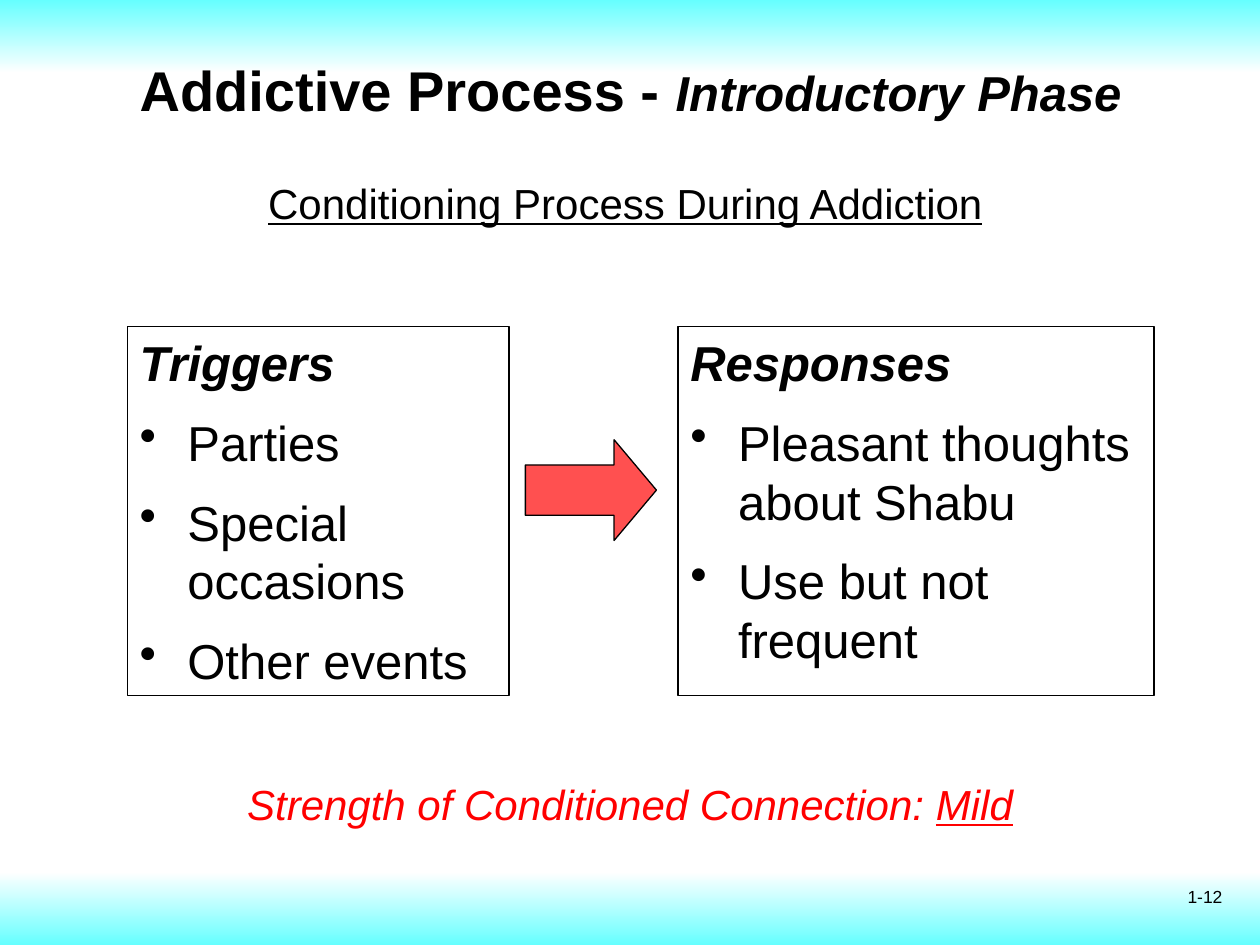
import pptx
import pptx.dml.color
import pptx.enum.shapes
import pptx.enum.text
import pptx.oxml
import pptx.oxml.ns
import pptx.util
from pptx.util import Inches

BLACK = pptx.dml.color.RGBColor(0x00, 0x00, 0x00)
WHITE = pptx.dml.color.RGBColor(0xFF, 0xFF, 0xFF)
RED = pptx.dml.color.RGBColor(0xFF, 0x00, 0x00)
CORAL = pptx.dml.color.RGBColor(0xFF, 0x50, 0x50)
CYAN = pptx.dml.color.RGBColor(0x66, 0xFF, 0xFF)

SHAPES = pptx.enum.shapes.MSO_SHAPE
ALIGN = pptx.enum.text.PP_ALIGN
ANCHOR = pptx.enum.text.MSO_ANCHOR


def add_run(para, text, size, color=BLACK, bold=False, italic=False, underline=False):
    span = para.add_run()
    span.text = text
    span.font.name = "Arial"
    span.font.size = pptx.util.Pt(size)
    span.font.color.rgb = color
    span.font.bold = bold
    span.font.italic = italic
    span.font.underline = underline


def add_text_box(left, top, width, height, align, anchor=ANCHOR.TOP, wrap=True):
    """Add an empty text box and return its text frame."""
    box = page.shapes.add_textbox(Inches(left), Inches(top), Inches(width), Inches(height))
    frame = box.text_frame
    frame.word_wrap = wrap
    frame.vertical_anchor = anchor
    frame.paragraphs[0].alignment = align
    return frame


deck = pptx.Presentation()
deck.slide_width = Inches(10)
deck.slide_height = Inches(7.5)
page = deck.slides.add_slide(deck.slide_layouts[6])

# Bands fading towards the middle of the slide
BAND_HEIGHT = 0.58
for top, upper, lower in [(7.5 - BAND_HEIGHT, WHITE, CYAN), (0, CYAN, WHITE)]:
    band = page.shapes.add_shape(
        SHAPES.RECTANGLE, 0, Inches(top), Inches(10), Inches(BAND_HEIGHT))
    band.shadow.inherit = False
    band.line.fill.background()
    band.fill.gradient()
    band.fill.gradient_angle = 270
    for stop, color in zip(band.fill.gradient_stops, (upper, lower)):
        stop.color.rgb = color
    for stop, position in zip(band.fill.gradient_stops, (0, 1)):
        stop.position = position

# Headings
title = add_text_box(0.69, 0.27, 8.63, 0.87, ALIGN.CENTER, ANCHOR.MIDDLE)
add_run(title.paragraphs[0], "Addictive Process - ", 32, bold=True)
add_run(title.paragraphs[0], "Introductory Phase", 28, bold=True, italic=True)

subtitle = add_text_box(2.03, 1.36, 5.94, 0.5, ALIGN.LEFT, wrap=False)
add_run(subtitle.paragraphs[0], "Conditioning Process During Addiction", 24, underline=True)

# Triggers and responses
PANELS = [
    (1.01, 3.03, "Triggers", ["Parties", "Special occasions", "Other events"]),
    (5.38, 3.78, "Responses", ["Pleasant thoughts about Shabu", "Use but not frequent"]),
]
for left, width, heading, items in PANELS:
    frame = add_text_box(left, 2.59, width, 2.93, ALIGN.LEFT)
    panel = page.shapes[-1]
    panel.line.color.rgb = BLACK
    panel.line.width = pptx.util.Pt(0.75)
    add_run(frame.paragraphs[0], heading, 28, bold=True, italic=True)
    for item in items:
        para = frame.add_paragraph()
        para.space_before = pptx.util.Pt(12)
        add_run(para, item, 28)
        properties = para._p.get_or_add_pPr()
        properties.set("marL", str(Inches(0.38)))
        properties.set("indent", str(Inches(-0.38)))
        bullet = pptx.oxml.parse_xml(
            f'<a:buChar {pptx.oxml.ns.nsdecls("a")} char="•"/>')
        properties.append(bullet)

arrow = page.shapes.add_shape(
    SHAPES.RIGHT_ARROW, Inches(4.17), Inches(3.49), Inches(1.04), Inches(0.8))
arrow.shadow.inherit = False
arrow.adjustments[0] = 0.5
arrow.adjustments[1] = 0.42
arrow.fill.solid()
arrow.fill.fore_color.rgb = CORAL
arrow.line.color.rgb = BLACK
arrow.line.width = pptx.util.Pt(0.75)

# Conclusion and page number
strength = add_text_box(0.79, 5.99, 8.42, 0.71, ALIGN.CENTER, ANCHOR.MIDDLE)
strength.margin_top = Inches(0.12)
add_run(strength.paragraphs[0], "Strength of Conditioned Connection: ", 24, RED, italic=True)
add_run(strength.paragraphs[0], "Mild", 24, RED, italic=True, underline=True)

page_number = add_text_box(7.47, 6.98, 2.33, 0.52, ALIGN.RIGHT)
add_run(page_number.paragraphs[0], "1-12", 10)

deck.save("out.pptx")
